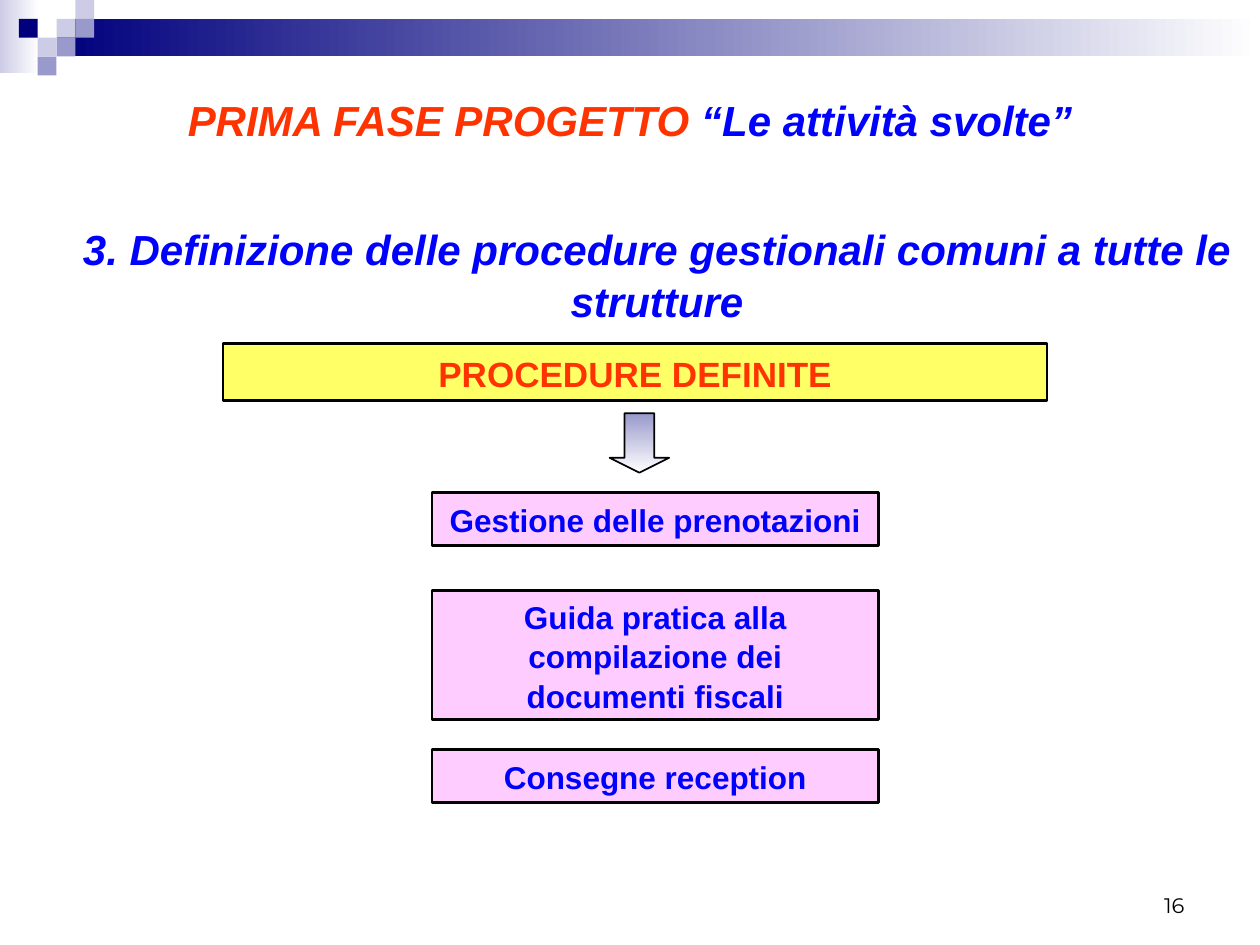
import pptx
import pptx.util
import pptx.dml.color
import pptx.enum.shapes
import pptx.enum.text
import pptx.oxml.ns
import lxml.etree

Cm = pptx.util.Cm
Pt = pptx.util.Pt
SHAPE = pptx.enum.shapes.MSO_SHAPE
ALIGN = pptx.enum.text.PP_ALIGN
ANCHOR = pptx.enum.text.MSO_ANCHOR

COLORS = {
    "navy": "00007D", "violet": "9999CC", "lilac": "CCCCE6",
    "white": "FFFFFF", "black": "000000", "blue": "0000FF",
    "red": "FF3300", "yellow": "FFFF66", "pink": "FFCCFF",
}


class SlideBuilder:
    font = "Arial"

    def __init__(self, slide):
        self.slide = slide

    def color(self, name):
        return pptx.dml.color.RGBColor.from_string(COLORS[name])

    def shape(self, kind, area, fill, line=None, angle=0):
        shape = self.slide.shapes.add_shape(kind, *map(Cm, area))
        shape.shadow.inherit = False
        if isinstance(fill, tuple):
            shape.fill.gradient()
            shape.fill.gradient_angle = angle
            for stop, name in zip(shape.fill.gradient_stops, fill):
                stop.color.rgb = self.color(name)
        else:
            shape.fill.solid()
            shape.fill.fore_color.rgb = self.color(fill)
        if line:
            shape.line.color.rgb = self.color("black")
            shape.line.width = Pt(line)
        else:
            shape.line.fill.background()
        return shape

    def set_text(self, frame, spans, size, align=ALIGN.CENTER, anchor=ANCHOR.TOP,
                 font=None, bold=True, italic=False, spacing=1.05):
        frame.word_wrap = True
        frame.auto_size = pptx.enum.text.MSO_AUTO_SIZE.NONE
        frame.vertical_anchor = anchor
        para = frame.paragraphs[0]
        para.alignment = align
        para.line_spacing = spacing
        para.font.name = font or self.font
        para.font.size = Pt(size)
        para.font.bold = bold
        para.font.italic = italic
        for text, name in spans:
            span = para.add_run()
            span.text = text
            span.font.color.rgb = self.color(name)
        return para

    def box(self, area, text, size, fill, color):
        box = self.shape(SHAPE.RECTANGLE, area, fill, line=1.5)
        self.set_text(box.text_frame, [(text, color)], size, anchor=ANCHOR.MIDDLE)

    def heading(self, holder, area, spans):
        holder.left, holder.top, holder.width, holder.height = map(Cm, area)
        para = self.set_text(holder.text_frame, spans, 24, italic=True)
        properties = para._p.get_or_add_pPr()
        properties.set("marL", "0")
        properties.set("indent", "0")
        no_bullet = lxml.etree.SubElement(properties, pptx.oxml.ns.qn("a:buNone"))
        properties.find(pptx.oxml.ns.qn("a:defRPr")).addprevious(no_bullet)

    def label(self, area, text, size, font):
        box = self.slide.shapes.add_textbox(*map(Cm, area))
        self.set_text(box.text_frame, [(text, "black")], size, ALIGN.RIGHT,
                      ANCHOR.BOTTOM, font, bold=False, spacing=1)


def main():
    deck = pptx.Presentation()
    deck.slide_width, deck.slide_height = Cm(25.4), Cm(19.05)
    page = deck.slides.add_slide(deck.slide_layouts[1])
    builder = SlideBuilder(page)

    builder.shape(SHAPE.RECTANGLE, (0, 0, 0.79, 1.48), ("lilac", "white"))
    builder.shape(SHAPE.RECTANGLE, (1.14, 0.38, 24.26, 0.76), ("navy", "white"))
    tile = 0.38
    for column, row, fill in [
        (3, 1, "lilac"), (4, 0, "lilac"), (4, 1, "violet"), (2, 2, "lilac"),
        (1, 1, "navy"), (3, 2, "violet"), (2, 3, "violet"),
    ]:
        builder.shape(SHAPE.RECTANGLE, (column * tile, row * tile, tile, tile), fill)

    builder.heading(page.shapes.title, (1.09, 1.73, 23.22, 1.4), [
        ("PRIMA FASE PROGETTO ", "red"), ("“Le attività svolte”", "blue"),
    ])
    builder.heading(page.placeholders[1], (1.09, 4.32, 24.31, 1.6), [
        ("3. Definizione delle procedure gestionali comuni a tutte le strutture", "blue"),
    ])

    builder.box((4.5, 6.93, 16.61, 1.15), "PROCEDURE DEFINITE", 20, "yellow", "red")
    arrow = builder.shape(SHAPE.DOWN_ARROW, (12.29, 8.33, 1.2, 1.2),
                          ("violet", "white"), line=1, angle=270)
    arrow.adjustments[1] = 0.25

    for top, height, text in [
        (9.93, 1.07, "Gestione delle prenotazioni"),
        (11.91, 2.6, "Guida pratica alla compilazione dei documenti fiscali"),
        (15.11, 1.07, "Consegne reception"),
    ]:
        builder.box((8.71, top, 9, height), text, 18, "pink", "blue")

    builder.label((18.21, 17.35, 5.92, 1.27), "16", 12, "Montserrat")
    deck.save("out.pptx")


if __name__ == "__main__":
    main()
